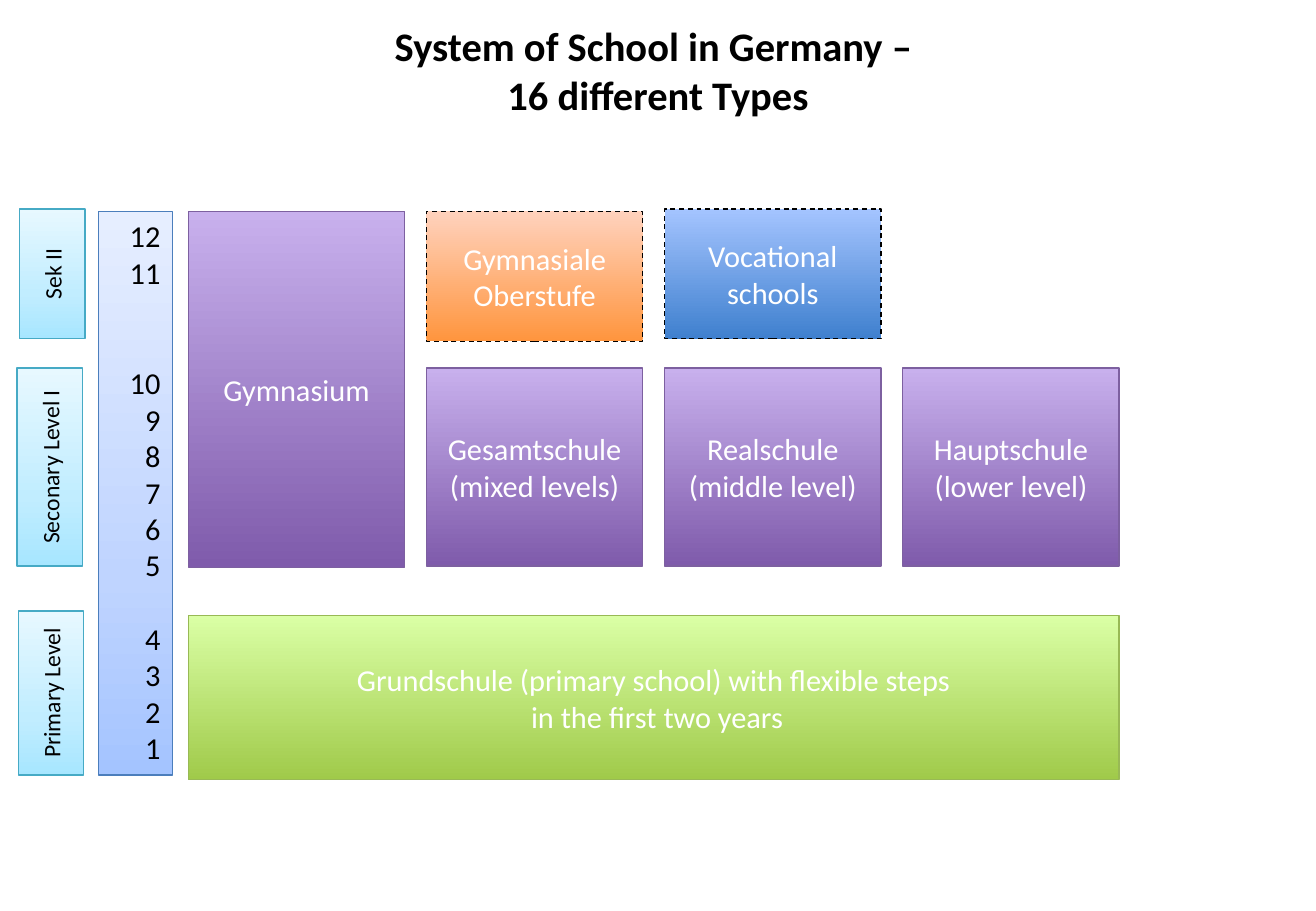
import copy

import pptx
import pptx.dml.color
import pptx.enum.dml
import pptx.enum.shapes
import pptx.enum.text
import pptx.util

EMU_PER_PX = 9144  # 100 px to the inch

CENTRE = pptx.enum.text.PP_ALIGN.CENTER
RIGHT = pptx.enum.text.PP_ALIGN.RIGHT
TOP = pptx.enum.text.MSO_ANCHOR.TOP
MIDDLE = pptx.enum.text.MSO_ANCHOR.MIDDLE

# Gradient colours run from the bottom edge to the top edge.
PURPLE = ["7F5BAB", "C8B0ED"]
GREEN = ["A0CA4A", "DAFFA5"]
ORANGE = ["FF953E", "FFD2BD"]
BLUE = ["3F80CE", "A4C4FF"]
PALE_BLUE = ["A4C4FF", "BFD4FF", "E6EEFF"]
CYAN = ["A7E6FF", "C1EDFF", "E7F8FF"]
MIDDLE_STOP = 0.35

COLUMN_LEFT, COLUMN_WIDTH, COLUMN_STEP = 155, 178, 196
UPPER_HEIGHT, LOWER_TOP, LOWER_HEIGHT = 107, 303, 163


def px(length):
    return pptx.util.Emu(length * EMU_PER_PX)


def colour(value):
    return pptx.dml.color.RGBColor.from_string(value)


def write_text(box, text, size=18, ink="FFFFFF", bold=False, align=CENTRE,
               anchor=MIDDLE, gaps=None):
    """Write one paragraph per line; \\v breaks a line, gaps maps a line to its space before."""
    frame = box.text_frame
    frame.word_wrap = True
    frame.auto_size = pptx.enum.text.MSO_AUTO_SIZE.NONE
    frame.vertical_anchor = anchor
    for index, line in enumerate(text.split("\n")):
        para = frame.add_paragraph() if index else frame.paragraphs[0]
        para.alignment = align
        if gaps and line in gaps:
            para.space_before = pptx.util.Pt(gaps[line])
        for part_index, part in enumerate(line.split("\v")):
            if part_index:
                para.add_line_break()
            span = para.add_run()
            span.text = part
            span.font.name = "Calibri"
            span.font.size = pptx.util.Pt(size)
            span.font.bold = bold
            span.font.color.rgb = colour(ink)


def fill_gradient(box, colours):
    box.fill.gradient()
    box.fill.gradient_angle = 90
    positions = [0, 1]
    if len(colours) == 3:
        positions.insert(1, MIDDLE_STOP)
        first_stop = box._element.spPr.find(".//" + pptx.oxml.ns.qn("a:gs"))
        first_stop.addnext(copy.deepcopy(first_stop))
    for stop, position, value in zip(box.fill.gradient_stops, positions, colours):
        stop.position = position
        stop.color.rgb = colour(value)


def add_block(page, left, top, width, height, text, colours, outline,
              dashed=False, **text_format):
    box = page.shapes.add_shape(pptx.enum.shapes.MSO_SHAPE.RECTANGLE,
                                px(left), px(top), px(width), px(height))
    box.shadow.inherit = False
    fill_gradient(box, colours)
    box.line.color.rgb = colour(outline)
    box.line.width = pptx.util.Pt(0.75)
    if dashed:
        box.line.dash_style = pptx.enum.dml.MSO_LINE.DASH
    write_text(box, text, **text_format)
    return box


def add_level(page, left, top, height, text):
    box = add_block(page, left, top, 54, height, text, CYAN, "46AAC5",
                    size=14, ink="000000")
    box.text_frame._txBody.bodyPr.set("vert", "vert270")


def add_school(page, column, top, height, text, colours=PURPLE,
               outline="7D60A0", dashed=False):
    add_block(page, COLUMN_LEFT + column * COLUMN_STEP, top, COLUMN_WIDTH,
              height, text, colours, outline, dashed)


def add_title(page, text):
    title = page.shapes.title
    title.left, title.top, title.width, title.height = map(px, (54, -5, 975, 125))
    write_text(title, text, size=24, ink="000000", bold=True)


def main():
    deck = pptx.Presentation()
    deck.slide_width, deck.slide_height = px(1083), px(750)
    page = deck.slides.add_slide(deck.slide_layouts[5])
    add_title(page, "System of School in Germany – \v16 different Types")

    grades = "\n".join(str(grade) for grade in range(12, 0, -1))
    add_block(page, 81, 174, 61, 464, grades, PALE_BLUE, "4B7EBC", ink="000000",
              align=RIGHT, anchor=TOP, gaps={"10": 44, "4": 22})

    add_level(page, 15, 503, 135, "Primary Level")
    add_level(page, 14, LOWER_TOP, LOWER_HEIGHT, "Seconary Level I")
    add_level(page, 16, 172, UPPER_HEIGHT, "Sek II")

    add_block(page, COLUMN_LEFT, 507, 3 * COLUMN_STEP + COLUMN_WIDTH, 135,
              "Grundschule (primary school) with flexible steps\n in the first two years",
              GREEN, "98B955")
    add_school(page, 0, 174, 293, "Gymnasium")
    lower_schools = ["Gesamtschule\n(mixed levels)", "Realschule (middle level)",
                     "Hauptschule\n(lower level)"]
    for column, text in enumerate(lower_schools, start=1):
        add_school(page, column, LOWER_TOP, LOWER_HEIGHT, text)
    add_school(page, 1, 174, UPPER_HEIGHT, "Gymnasiale Oberstufe", ORANGE,
               "000000", dashed=True)
    add_school(page, 2, 172, UPPER_HEIGHT, "Vocational schools", BLUE,
               "000000", dashed=True)

    deck.save("out.pptx")


if __name__ == "__main__":
    main()
